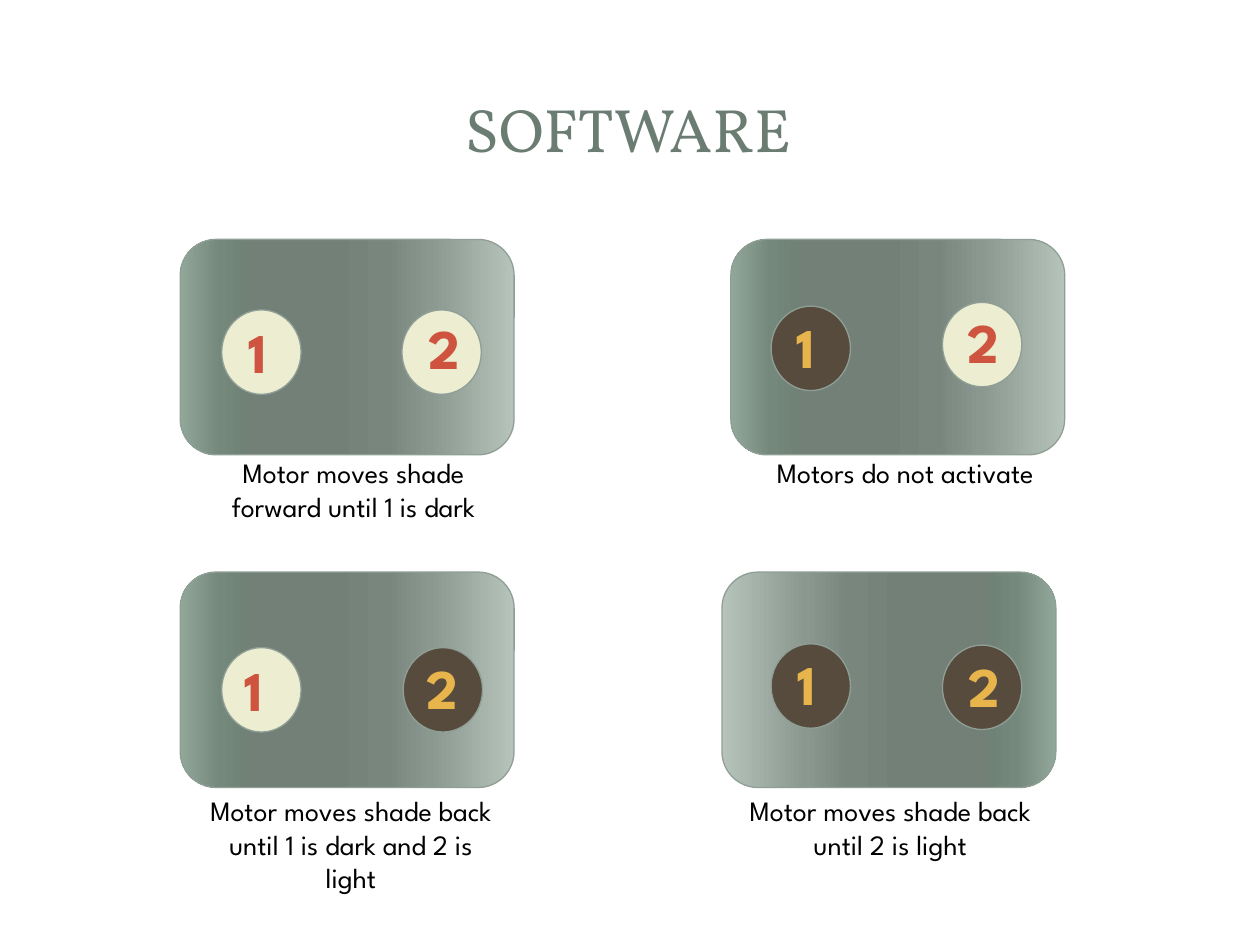
from dataclasses import dataclass

from lxml.etree import SubElement
from pptx import Presentation
from pptx.dml.color import RGBColor
from pptx.enum.shapes import MSO_SHAPE
from pptx.enum.text import MSO_ANCHOR, MSO_AUTO_SIZE, PP_ALIGN
from pptx.oxml.ns import qn
from pptx.util import Inches, Pt


@dataclass(frozen=True)
class Theme:
    heading_font: str = "Vollkorn"
    body_font: str = "League Spartan"
    heading_size: int = 35
    digit_size: int = 32
    caption_size: int = 16
    heading: str = "6B7D72"
    caption: str = "000000"
    outline: str = "8F9F96"
    light_sensor: str = "ECEDD1"
    dark_sensor: str = "564B3C"
    light_digit: str = "CF543F"
    dark_digit: str = "E8B54D"
    shade: tuple = (
        (0, "B6C3BB"), (25, "8B9890"), (38, "79867E"), (55, "728078"),
        (80, "708176"), (88, "75887C"), (100, "91A79A"),
    )


class SlideBuilder:
    def __init__(self, slide, theme):
        self.slide = slide
        self.theme = theme

    def outlined(self, preset, left, top, width, height):
        shape = self.slide.shapes.add_shape(
            preset, Inches(left), Inches(top), Inches(width), Inches(height))
        shape.shadow.inherit = False
        shape.line.color.rgb = RGBColor.from_string(self.theme.outline)
        shape.line.width = Pt(0.75)
        return shape

    def panel(self, left, top, rotation):
        panel = self.outlined(MSO_SHAPE.ROUNDED_RECTANGLE, left, top, 1.71, 2.65)
        panel.rotation = rotation
        panel.fill.gradient()
        panel.fill.gradient_angle = 270
        stops = panel._element.spPr.find(qn("a:gradFill")).find(qn("a:gsLst"))
        for stop in list(stops):
            stops.remove(stop)
        for percent, color in self.theme.shade:
            stop = SubElement(stops, qn("a:gs"), pos=str(percent * 1000))
            SubElement(stop, qn("a:srgbClr"), val=color)

    def sensor(self, left, top, is_dark):
        sensor = self.outlined(MSO_SHAPE.OVAL, left, top, 0.63, 0.67)
        color = self.theme.dark_sensor if is_dark else self.theme.light_sensor
        sensor.fill.solid()
        sensor.fill.fore_color.rgb = RGBColor.from_string(color)

    def text(self, words, box, color, frame_format, font_format, align=PP_ALIGN.CENTER):
        frame = self.slide.shapes.add_textbox(*map(Inches, box)).text_frame
        for name, value in frame_format.items():
            setattr(frame, name, value)
        paragraph = frame.paragraphs[0]
        paragraph.alignment = align
        run = paragraph.add_run()
        run.text = words
        for name, value in font_format.items():
            setattr(run.font, name, value)
        run.font.color.rgb = RGBColor.from_string(color)

    def heading(self, words):
        self.text(
            words, (0.47, 0.45, 9.03, 1.14), self.theme.heading,
            {"word_wrap": True, "vertical_anchor": MSO_ANCHOR.MIDDLE},
            {"name": self.theme.heading_font, "size": Pt(self.theme.heading_size)})

    def digit(self, words, left, top, is_dark):
        self.text(
            words, (left, top, 0.45, 0.64),
            self.theme.dark_digit if is_dark else self.theme.light_digit,
            {"word_wrap": False, "auto_size": MSO_AUTO_SIZE.SHAPE_TO_FIT_TEXT},
            {"name": self.theme.body_font, "size": Pt(self.theme.digit_size), "bold": True},
            PP_ALIGN.LEFT)

    def caption(self, words, left, top, height):
        self.text(
            words, (left, top, 2.55, height), self.theme.caption,
            {"word_wrap": True, "auto_size": MSO_AUTO_SIZE.SHAPE_TO_FIT_TEXT},
            {"name": self.theme.body_font, "size": Pt(self.theme.caption_size)})


STATES = [
    {
        "panel": (1.9, 1.43, 90),
        "sensors": [((1.76, 2.46), (1.87, 2.47), False), ((3.19, 2.46), (3.3, 2.44), False)],
        "caption": ("Motor moves shade forward until 1 is dark", 1.53, 3.57, 0.64),
    },
    {
        "panel": (6.27, 1.43, 90),
        "sensors": [((6.12, 2.43), (6.22, 2.43), True), ((7.48, 2.4), (7.58, 2.39), False)],
        "caption": ("Motors do not activate", 5.91, 3.57, 0.64),
    },
    {
        "panel": (1.9, 4.07, 90),
        "sensors": [((1.76, 5.14), (1.84, 5.15), False), ((3.2, 5.14), (3.29, 5.14), True)],
        "caption": ("Motor moves shade back until 1 is dark and 2 is light", 1.51, 6.25, 0.91),
    },
    {
        "panel": (6.2, 4.07, 270),
        "sensors": [((6.12, 5.11), (6.23, 5.11), True), ((7.48, 5.12), (7.59, 5.12), True)],
        "caption": ("Motor moves shade back until 2 is light", 5.79, 6.25, 0.64),
    },
]


def main():
    presentation = Presentation()
    presentation.slide_width = Inches(10)
    presentation.slide_height = Inches(7.5)
    slide = presentation.slides.add_slide(presentation.slide_layouts[6])
    builder = SlideBuilder(slide, Theme())
    builder.heading("SOFTWARE")
    for state in STATES:
        builder.panel(*state["panel"])
        for number, (sensor, digit, is_dark) in enumerate(state["sensors"], 1):
            builder.sensor(*sensor, is_dark)
            builder.digit(str(number), *digit, is_dark)
        builder.caption(*state["caption"])
    presentation.save("out.pptx")


if __name__ == "__main__":
    main()
